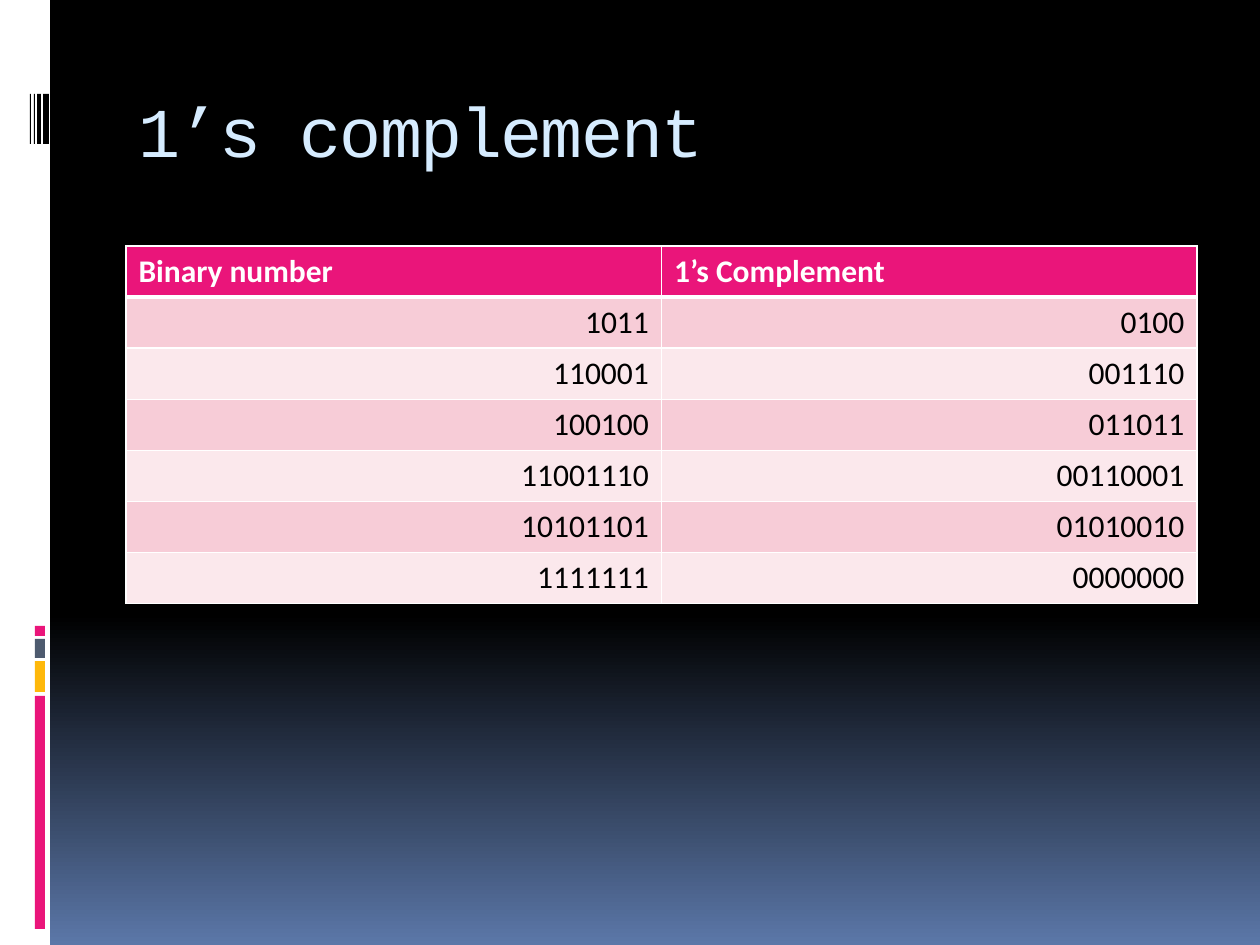
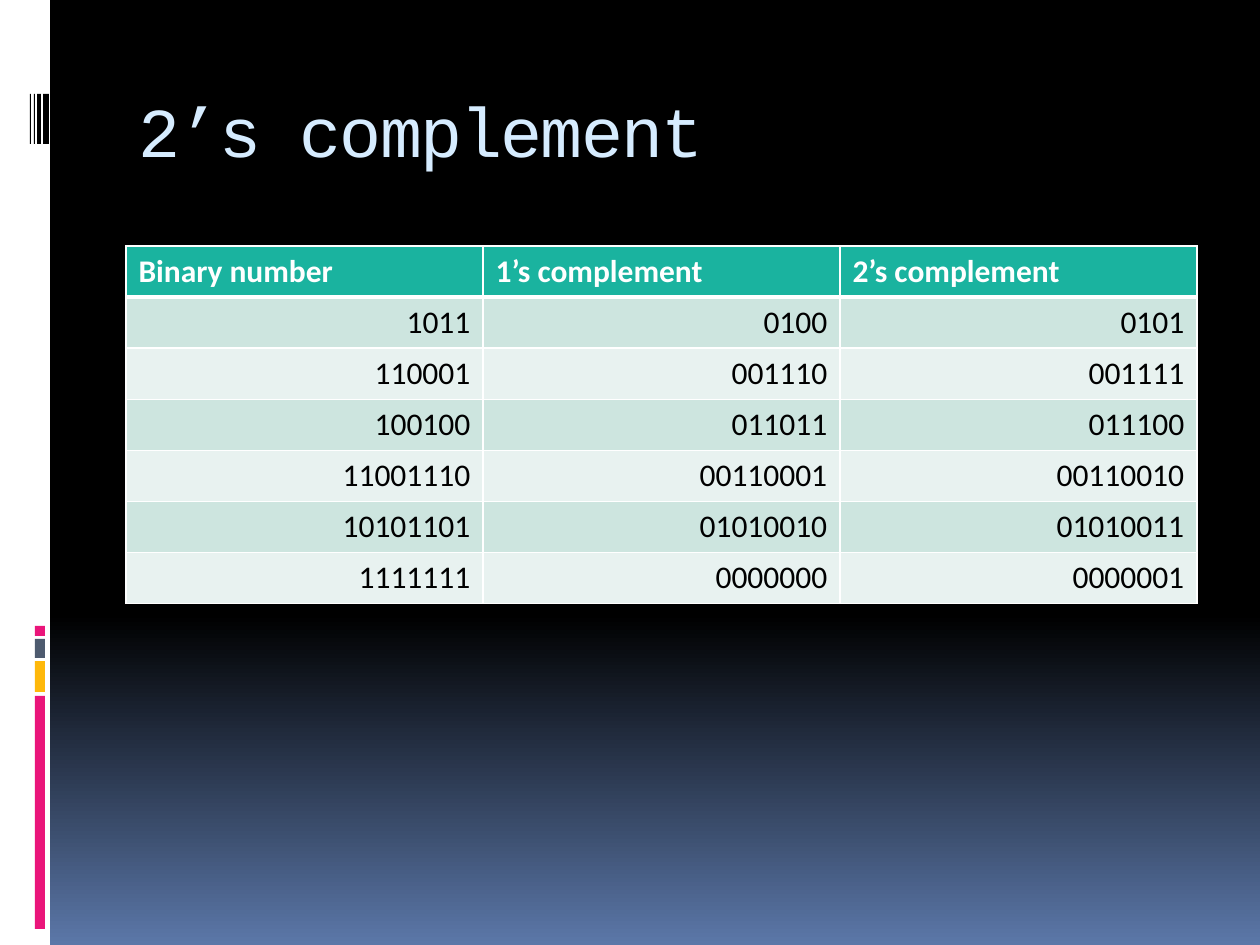
from dataclasses import dataclass

from lxml.etree import SubElement
from pptx import Presentation
from pptx.dml.color import RGBColor
from pptx.enum.shapes import MSO_SHAPE
from pptx.enum.text import MSO_ANCHOR, PP_ALIGN
from pptx.oxml.ns import qn
from pptx.util import Emu, Pt


@dataclass(frozen=True)
class Theme:
    """Colours, fonts and type sizes shared by the slides."""

    black: str = "000000"
    white: str = "FFFFFF"
    horizon: str = "5B77A8"
    title: str = "D6ECFF"
    pink: str = "EA157A"
    amber: str = "FEB80A"
    slate: str = "4E5B6F"
    pink_bands: tuple = ("F7CCD7", "FBE8EC")
    teal: str = "1AB39F"
    teal_bands: tuple = ("CDE5DF", "E8F2F0")
    title_font: str = "Courier New"
    table_font: str = "Calibri"
    title_size: int = 40
    table_size: int = 18
    rule: int = 1
    header_rule: int = 3


THEME = Theme()
EMU_PER_PX = 914400 / 126
SLIDE_WIDTH, SLIDE_HEIGHT = 1260, 945
CONTENT_LEFT, CONTENT_WIDTH = 126, 1071
TITLE_TOP, TITLE_HEIGHT = 71, 126
TABLE_TOP, ROW_HEIGHT = 246, 51

SIDEBAR = [
    (0, 0, 50, SLIDE_HEIGHT, THEME.white),
    (35, 696, 10, 233, THEME.pink),
    (35, 661, 10, 31, THEME.amber),
    (35, 639, 10, 19, THEME.slate),
    (35, 626, 10, 10, THEME.pink),
] + [(left, 94, width, 50, THEME.black)
     for left, width in ((43, 6), (37, 4), (34, 1), (30, 1))]

NUMBERS = [
    ("1011", "0100", "0101"),
    ("110001", "001110", "001111"),
    ("100100", "011011", "011100"),
    ("11001110", "00110001", "00110010"),
    ("10101101", "01010010", "01010011"),
    ("1111111", "0000000", "0000001"),
]


def px(length):
    """Turn pixels into EMU."""
    return Emu(round(length * EMU_PER_PX))


def rgb(colour):
    """Turn a hex string into a colour."""
    return RGBColor.from_string(colour)


def style_run(run, font_name, size, colour, bold=False):
    """Set the typeface, size, colour and weight of a run."""
    run.font.name = font_name
    run.font.size = Pt(size)
    run.font.color.rgb = rgb(colour)
    run.font.bold = bold


def set_background(master):
    """Fade the master's background from black to blue."""
    fill = master.background.fill
    fill.gradient()
    fill.gradient_angle = 270
    fades = ((0.65, THEME.black), (1, THEME.horizon))
    for stop, (position, colour) in zip(fill.gradient_stops, fades):
        stop.position = position
        stop.color.rgb = rgb(colour)


def add_sidebar(slide):
    """Draw the white band with its coloured and black bars."""
    for left, top, width, height, colour in SIDEBAR:
        bar = slide.shapes.add_shape(
            MSO_SHAPE.RECTANGLE, px(left), px(top), px(width), px(height))
        bar.shadow.inherit = False
        bar.fill.solid()
        bar.fill.fore_color.rgb = rgb(colour)
        bar.line.fill.background()


def set_title(slide, wording):
    """Place and format the slide title."""
    title = slide.shapes.title
    title.left, title.top = px(CONTENT_LEFT), px(TITLE_TOP)
    title.width, title.height = px(CONTENT_WIDTH), px(TITLE_HEIGHT)
    frame = title.text_frame
    frame.text = wording
    frame.vertical_anchor = MSO_ANCHOR.MIDDLE
    frame.margin_bottom = px(16)
    heading = frame.paragraphs[0]
    heading.alignment = PP_ALIGN.LEFT
    run = heading.runs[0]
    style_run(run, THEME.title_font, THEME.title_size, THEME.title)
    run.font._element.set("spc", "-100")


def set_borders(cell, top, bottom):
    """Rule a cell in white with the given top and bottom weights."""
    properties = cell._tc.get_or_add_tcPr()
    weights = {"lnL": THEME.rule, "lnR": THEME.rule, "lnT": top, "lnB": bottom}
    for side, weight in weights.items():
        line = SubElement(properties, qn(f"a:{side}"), w=str(Pt(weight)))
        paint = SubElement(line, qn("a:solidFill"))
        SubElement(paint, qn("a:srgbClr"), val=THEME.white)


def fill_cell(cell, wording, row, accent, bands):
    """Write and format one header or number cell."""
    is_header = row == 0
    set_borders(cell,
                THEME.header_rule if row == 1 else THEME.rule,
                THEME.header_rule if is_header else THEME.rule)
    cell.fill.solid()
    cell.fill.fore_color.rgb = rgb(accent if is_header else bands[(row - 1) % 2])
    cell.text_frame.text = wording
    paragraph = cell.text_frame.paragraphs[0]
    paragraph.alignment = PP_ALIGN.LEFT if is_header else PP_ALIGN.RIGHT
    style_run(paragraph.runs[0], THEME.table_font, THEME.table_size,
              THEME.white if is_header else THEME.black, is_header)


def add_number_table(slide, headings, accent, bands):
    """Add a table with one column of numbers under each heading."""
    rows = [headings] + [numbers[:len(headings)] for numbers in NUMBERS]
    table = slide.shapes.add_table(
        len(rows), len(headings), px(CONTENT_LEFT), px(TABLE_TOP),
        px(CONTENT_WIDTH), px(ROW_HEIGHT * len(rows))).table
    for row, wordings in enumerate(rows):
        for column, wording in enumerate(wordings):
            fill_cell(table.cell(row, column), wording, row, accent, bands)


def add_complement_slide(deck, title, headings, accent, bands):
    """Add a titled slide with its table of complements."""
    slide = deck.slides.add_slide(deck.slide_layouts.get_by_name("Title Only"))
    add_sidebar(slide)
    set_title(slide, title)
    add_number_table(slide, headings, accent, bands)


def main():
    """Build and save the deck."""
    deck = Presentation()
    deck.slide_width, deck.slide_height = px(SLIDE_WIDTH), px(SLIDE_HEIGHT)
    set_background(deck.slide_master)
    add_complement_slide(deck, "1’s complement",
                         ("Binary number", "1’s Complement"),
                         THEME.pink, THEME.pink_bands)
    add_complement_slide(deck, "2’s complement",
                         ("Binary number", "1’s complement", "2’s complement"),
                         THEME.teal, THEME.teal_bands)
    deck.save("out.pptx")


if __name__ == "__main__":
    main()
